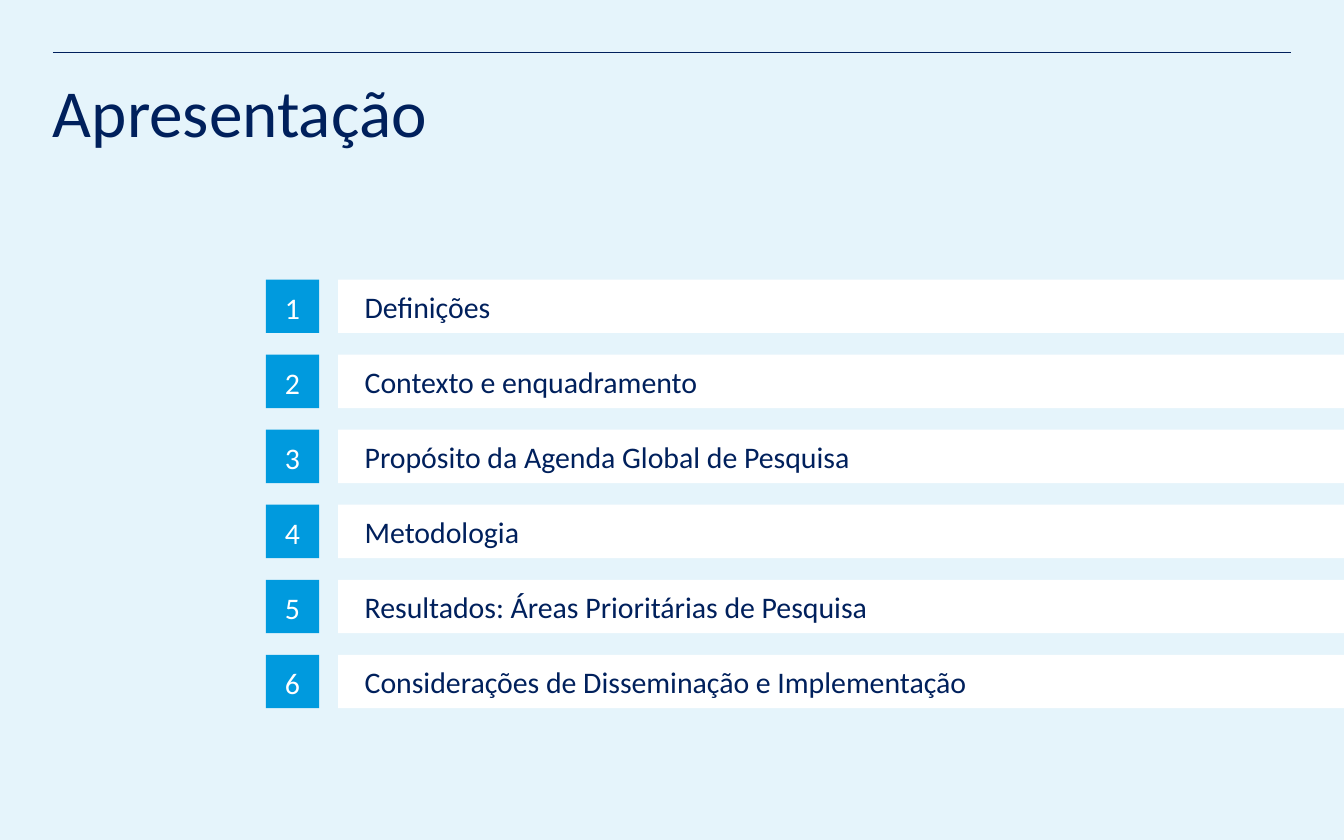
from lxml import etree
from pptx import Presentation
from pptx.dml.color import RGBColor
from pptx.enum.shapes import MSO_CONNECTOR, MSO_SHAPE
from pptx.enum.text import MSO_ANCHOR, MSO_AUTO_SIZE, PP_ALIGN
from pptx.oxml.ns import qn
from pptx.util import Pt

STRAIGHT = MSO_CONNECTOR.STRAIGHT
RECTANGLE = MSO_SHAPE.RECTANGLE
TOP, MIDDLE = MSO_ANCHOR.TOP, MSO_ANCHOR.MIDDLE
LEFT, CENTER = PP_ALIGN.LEFT, PP_ALIGN.CENTER
NO_FIT = MSO_AUTO_SIZE.NONE

NAVY = RGBColor(0x00, 0x20, 0x5C)
BLUE = RGBColor(0x00, 0x9A, 0xDE)
PALE_BLUE = RGBColor(0xE5, 0xF4, 0xFB)
WHITE = RGBColor(0xFF, 0xFF, 0xFF)

FONT = "Calibri"
PAGE_WIDTH, PAGE_HEIGHT = 720, 450
MARGIN = 28.35
TOPICS = [
    "Definições",
    "Contexto e enquadramento",
    "Propósito da Agenda Global de Pesquisa",
    "Metodologia",
    "Resultados: Áreas Prioritárias de Pesquisa",
    "Considerações de Disseminação e Implementação",
]


def write_text(frame, text, size, color, align, anchor, left_inset=0, top_inset=0):
    frame.word_wrap = True
    frame.auto_size = NO_FIT
    frame.vertical_anchor = anchor
    frame.margin_left, frame.margin_top = Pt(left_inset), Pt(top_inset)
    frame.margin_right = frame.margin_bottom = 0
    para = frame.paragraphs[0]
    para.alignment = align
    span = para.add_run()
    span.text = text
    span.font.name = FONT
    span.font.size = Pt(size)
    span.font.color.rgb = color
    return para


def add_block(page, left, top, width, height, fill):
    """Add a plain filled rectangle and return its text frame."""
    block = page.shapes.add_shape(RECTANGLE, Pt(left), Pt(top), Pt(width), Pt(height))
    block.shadow.inherit = False
    block.fill.solid()
    block.fill.fore_color.rgb = fill
    block.line.fill.background()
    return block.text_frame


def add_header(page, left, top, width, height):
    """Place the rule along the top of the box and the title under it."""
    rule = page.shapes.add_connector(STRAIGHT, Pt(left), Pt(top), Pt(left + width), Pt(top))
    rule.line.color.rgb = NAVY
    rule.line.width = Pt(0.5)
    etree.SubElement(rule.element.spPr, qn("a:effectLst"))

    title = page.shapes.title
    title.left, title.top = Pt(left), Pt(top)
    title.width, title.height = Pt(width), Pt(height)
    para = write_text(title.text_frame, "Apresentação", 36, NAVY, LEFT, TOP, top_inset=14.4)
    para.line_spacing = 0.9
    para.space_before = Pt(24)


def add_agenda(page, left, top, width, height, topics):
    """Spread one numbered bar per topic evenly over the box."""
    side = 28.6
    bar_offset = 38.8
    pitch = (height - side) / (len(topics) - 1)
    for index, topic in enumerate(topics):
        row_top = top + index * pitch
        bar = add_block(page, left + bar_offset, row_top, width - bar_offset, side, WHITE)
        write_text(bar, topic, 16, NAVY, LEFT, MIDDLE, left_inset=14.2)
        badge = add_block(page, left, row_top, side, side, BLUE)
        write_text(badge, str(index + 1), 16, WHITE, CENTER, MIDDLE, top_inset=1)


def main():
    deck = Presentation()
    deck.slide_width, deck.slide_height = Pt(PAGE_WIDTH), Pt(PAGE_HEIGHT)
    page = deck.slides.add_slide(deck.slide_layouts.get_by_name("Title Only"))
    page.background.fill.solid()
    page.background.fill.fore_color.rgb = PALE_BLUE

    add_header(page, MARGIN, 28, PAGE_WIDTH - 2 * MARGIN, 106)
    agenda_left = 142.4
    add_agenda(page, agenda_left, 149.8, PAGE_WIDTH - agenda_left, 229.6, TOPICS)
    deck.save("out.pptx")


if __name__ == "__main__":
    main()
